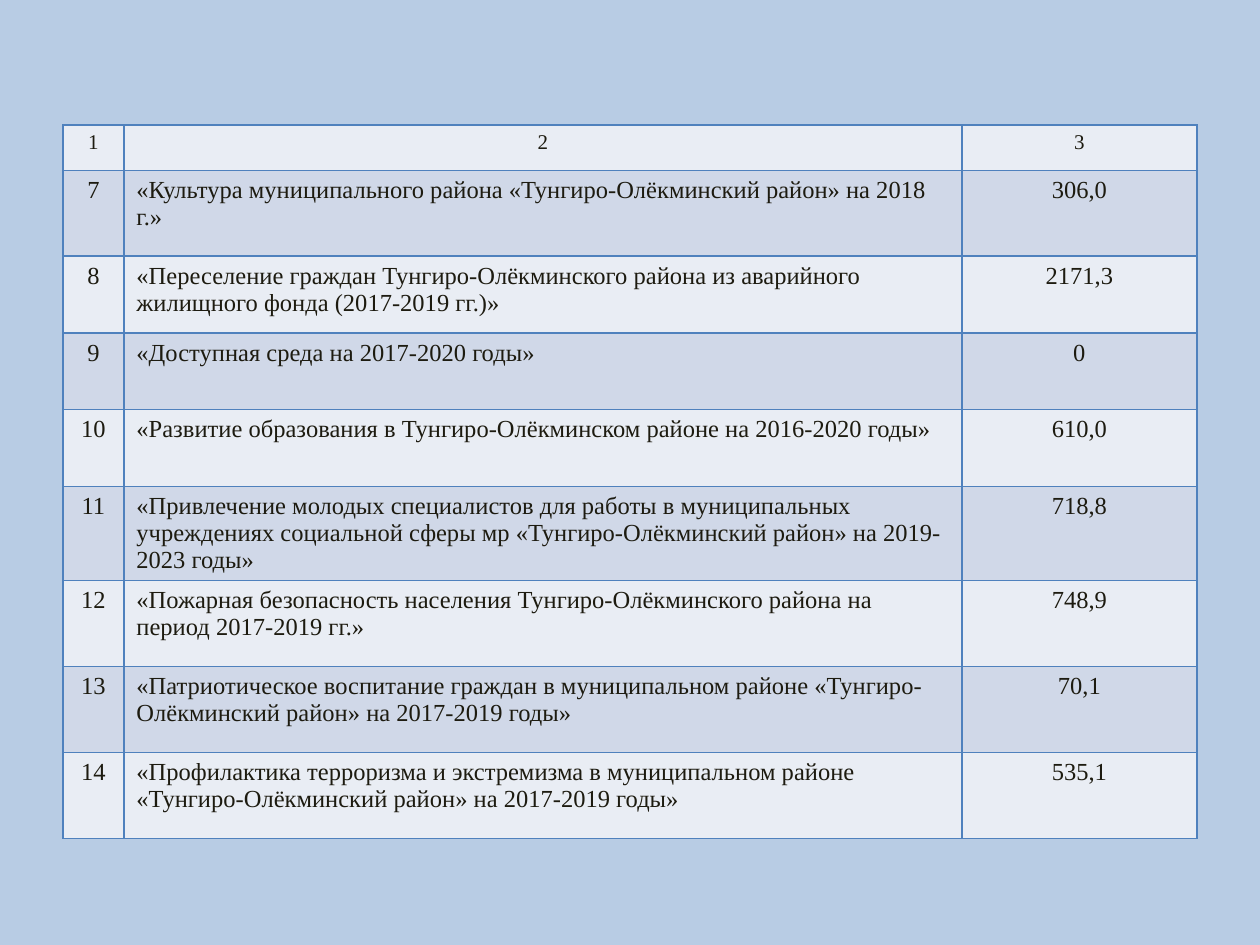
import pptx
import pptx.util
import pptx.dml.color
import pptx.enum.text
import pptx.oxml.ns
import lxml.etree

Pt = pptx.util.Pt
ALIGN = pptx.enum.text.PP_ALIGN

# Content: number, programme, amount
ROWS = [
    ("1", "2", "3"),
    ("7", "«Культура муниципального района «Тунгиро-Олёкминский район» на 2018 г.»", "306,0"),
    ("8", "«Переселение граждан Тунгиро-Олёкминского района из аварийного жилищного фонда (2017-2019 гг.)»", "2171,3"),
    ("9", "«Доступная среда на 2017-2020 годы»", "0"),
    ("10", "«Развитие образования в Тунгиро-Олёкминском районе на 2016-2020 годы»", "610,0"),
    ("11", "«Привлечение молодых специалистов для работы в муниципальных учреждениях социальной сферы мр «Тунгиро-Олёкминский район» на 2019-2023 годы»", "718,8"),
    ("12", "«Пожарная безопасность населения Тунгиро-Олёкминского района на период 2017-2019 гг.»", "748,9"),
    ("13", "«Патриотическое воспитание граждан в муниципальном районе «Тунгиро-Олёкминский район» на 2017-2019 годы»", "70,1"),
    ("14", "«Профилактика терроризма и экстремизма в муниципальном районе «Тунгиро-Олёкминский район» на 2017-2019 годы»", "535,1"),
]
COLUMN_WIDTHS = [34.8, 478.8, 134.4]
ROW_HEIGHTS = [25.9] + [49.1] + [43.9] * 3 + [53.7] + [49.1] * 3
LEFT, TOP = 36, 71.4
FONT = "Times New Roman"
COLORS = {
    "background": "B8CCE4",
    "light band": "E9EDF4",
    "dark band": "D0D8E8",
    "border": "4F81BD",
    "text": "1D1B10",
}


def color(name):
    return pptx.dml.color.RGBColor.from_string(COLORS[name])


def add_borders(cell, width=1):
    """Draw the four cell borders, placed before the fill as the schema asks."""
    qn = pptx.oxml.ns.qn
    properties = cell._tc.get_or_add_tcPr()
    for position, tag in enumerate(("a:lnL", "a:lnR", "a:lnT", "a:lnB")):
        line = lxml.etree.Element(qn(tag), w=str(Pt(width)))
        fill = lxml.etree.SubElement(line, qn("a:solidFill"))
        lxml.etree.SubElement(fill, qn("a:srgbClr"), val=COLORS["border"])
        properties.insert(position, line)


def fill_cell(cell, text, row, column):
    cell.fill.solid()
    cell.fill.fore_color.rgb = color("dark band" if row % 2 else "light band")
    add_borders(cell)
    paragraph = cell.text_frame.paragraphs[0]
    is_programme = row > 0 and column == 1
    paragraph.alignment = ALIGN.LEFT if is_programme else ALIGN.CENTER
    run = paragraph.add_run()
    run.text = text
    run.font.name = FONT
    run.font.size = Pt(14 if row else 12)
    run.font.color.rgb = color("text")


def main():
    presentation = pptx.Presentation()
    presentation.slide_width, presentation.slide_height = Pt(720), Pt(540)
    slide = presentation.slides.add_slide(presentation.slide_layouts[6])
    slide.background.fill.solid()
    slide.background.fill.fore_color.rgb = color("background")

    # Programme table
    table = slide.shapes.add_table(
        len(ROWS), len(COLUMN_WIDTHS), Pt(LEFT), Pt(TOP),
        Pt(sum(COLUMN_WIDTHS)), Pt(sum(ROW_HEIGHTS))).table
    table.first_row = table.horz_banding = False
    for table_column, width in zip(table.columns, COLUMN_WIDTHS):
        table_column.width = Pt(width)
    for table_row, height in zip(table.rows, ROW_HEIGHTS):
        table_row.height = Pt(height)
    for row, texts in enumerate(ROWS):
        for column, text in enumerate(texts):
            fill_cell(table.cell(row, column), text, row, column)

    presentation.save("out.pptx")


if __name__ == "__main__":
    main()
